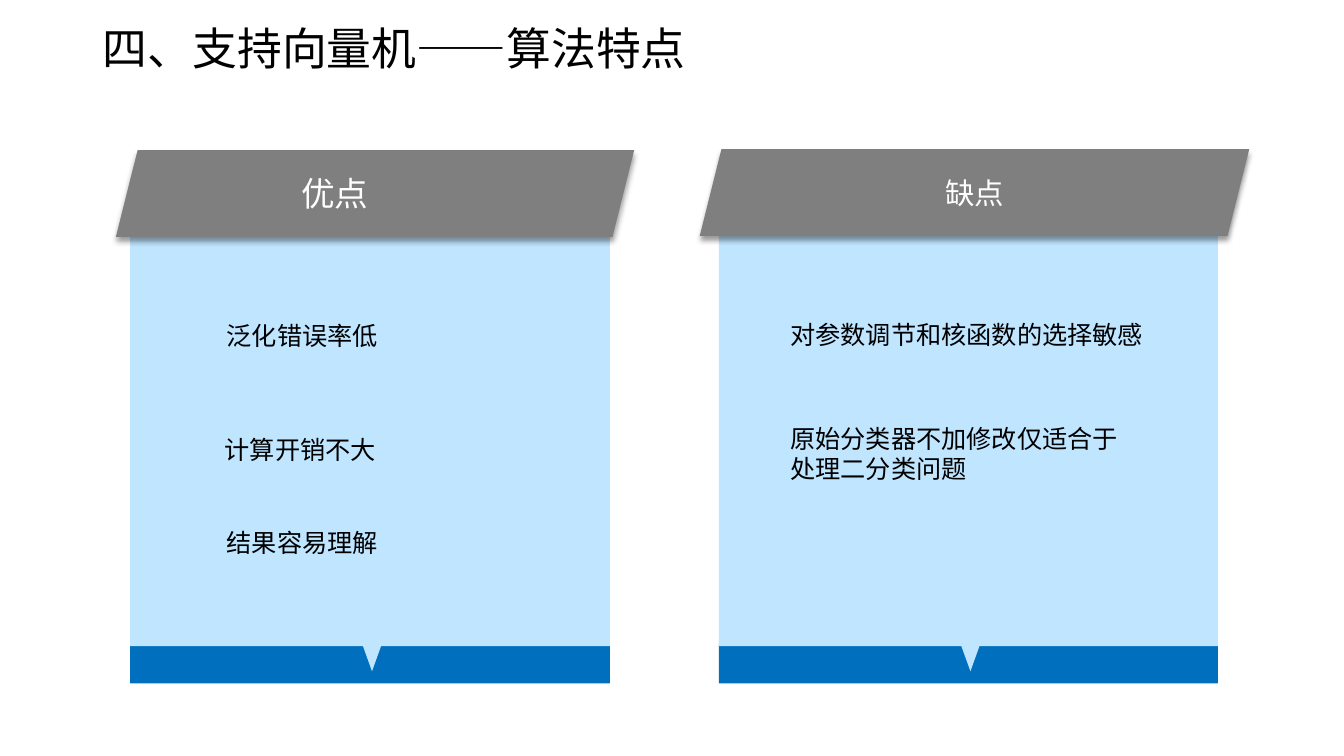
"""Build a slide comparing strengths and weaknesses of support vector machines."""
from dataclasses import dataclass

from lxml import etree
from pptx import Presentation
from pptx import util as u
from pptx.dml.color import RGBColor
from pptx.enum import shapes, text
from pptx.oxml import parse_xml
from pptx.oxml.ns import nsdecls, qn


@dataclass(frozen=True)
class Theme:
    title_font: str = "Noto Sans CJK SC"
    body_font: str = "Noto Sans CJK SC"
    header_font: str = "Arial"
    title_size: float = 32
    body_size: float = 18
    ink: str = "000000"
    header_ink: str = "FFFFFF"
    header_fill: str = "7F7F7F"
    panel_fill: str = "BFE5FF"
    footer_fill: str = "0070BE"


@dataclass(frozen=True)
class Box:
    left: float
    top: float
    width: float
    height: float

    def lengths(self) -> list:
        return [u.Inches(n) for n in (self.left, self.top, self.width, self.height)]


@dataclass(frozen=True)
class Point:
    wording: str
    box: Box


@dataclass(frozen=True)
class Panel:
    heading: str
    header: Box
    heading_font: str
    heading_size: float
    heading_indent: float
    heading_align: text.PP_ALIGN
    left: float
    width: float
    points: tuple[Point, ...]


THEME = Theme()
TITLE_BOX = Box(0.92, 0, 11.5, 1.02)
PANEL_TOP, PANEL_BOTTOM, NOTCH_BOTTOM = 1.9, 6.41, 6.66
NOTCH_HALF, NOTCH_SHIFT = 0.09, 0.02
FOOTER_TOP, FOOTER_HEIGHT = 6.39, 0.39
POINT_INDENT = 0.5

PANELS = (
    Panel("优点", Box(1.15, 1.49, 5.14, 0.86), THEME.header_font, 24, 1.22,
          text.PP_ALIGN.LEFT, 1.29, 4.76, (
              Point("泛化错误率低", Box(1.65, 2.66, 3.55, 1.34)),
              Point("计算开销不大", Box(1.63, 3.79, 3.55, 1.34)),
              Point("结果容易理解", Box(1.65, 4.71, 3.55, 1.34)))),
    Panel("缺点", Box(6.94, 1.48, 5.45, 0.86), THEME.title_font, 21, 0,
          text.PP_ALIGN.CENTER, 7.13, 4.95, (
              Point("对参数调节和核函数的选择敏感", Box(7.24, 2.77, 4.47, 1.1)),
              Point("原始分类器不加修改仅适合于处理二分类问题", Box(7.24, 3.83, 4.18, 1.34)))),
)


def write(shape, wording: str, font: str, size: float, color: str,
          align: text.PP_ALIGN = text.PP_ALIGN.LEFT, indent: float = 0):
    """Put one middle-anchored paragraph in a shape and return it."""
    frame = shape.text_frame
    frame.word_wrap = True
    frame.auto_size = text.MSO_AUTO_SIZE.NONE
    frame.vertical_anchor = text.MSO_ANCHOR.MIDDLE
    paragraph = frame.paragraphs[0]
    paragraph.alignment = align
    properties = paragraph._p.get_or_add_pPr()
    properties.set("marL", str(u.Inches(indent)))
    properties.set("indent", "0")
    run = paragraph.add_run()
    run.text = wording
    run.font.name = font
    run.font.size = u.Pt(size)
    run.font.color.rgb = RGBColor.from_string(color)
    east_asian = etree.SubElement(run._r.get_or_add_rPr(), qn("a:ea"))
    east_asian.set("typeface", THEME.body_font)
    return paragraph


def paint(shape, color: str) -> None:
    """Give a shape a plain fill without outline or shadow."""
    shape.shadow.inherit = False
    shape.fill.solid()
    shape.fill.fore_color.rgb = RGBColor.from_string(color)
    shape.line.fill.background()


def cast_shadow(shape) -> None:
    """Add a soft shadow just below a shape."""
    effects = shape._element.spPr.find(qn("a:effectLst"))
    effects.append(parse_xml(
        f'<a:outerShdw {nsdecls("a")} blurRad="{u.Pt(4)}" dist="{u.Pt(3)}" '
        'dir="5400000" algn="t" rotWithShape="0"><a:srgbClr val="000000">'
        '<a:alpha val="40000"/></a:srgbClr></a:outerShdw>'))


def draw_panel(slide, panel: Panel) -> None:
    """Draw the footer, notched body and slanted header of one panel."""
    group = slide.shapes.add_group_shape()
    footer = group.shapes.add_shape(
        shapes.MSO_SHAPE.RECTANGLE,
        *Box(panel.left, FOOTER_TOP, panel.width, FOOTER_HEIGHT).lengths())
    paint(footer, THEME.footer_fill)

    right = panel.left + panel.width
    notch = panel.left + panel.width / 2 + NOTCH_SHIFT
    outline = [(right, PANEL_TOP), (right, PANEL_BOTTOM),
               (notch + NOTCH_HALF, PANEL_BOTTOM), (notch, NOTCH_BOTTOM),
               (notch - NOTCH_HALF, PANEL_BOTTOM), (panel.left, PANEL_BOTTOM)]
    builder = group.shapes.build_freeform(u.Inches(panel.left), u.Inches(PANEL_TOP))
    builder.add_line_segments([(u.Inches(x), u.Inches(y)) for x, y in outline], close=True)
    paint(builder.convert_to_shape(), THEME.panel_fill)

    header = group.shapes.add_shape(shapes.MSO_SHAPE.PARALLELOGRAM, *panel.header.lengths())
    paint(header, THEME.header_fill)
    cast_shadow(header)
    write(header, panel.heading, panel.heading_font, panel.heading_size,
          THEME.header_ink, panel.heading_align, panel.heading_indent)


def draw_point(slide, point: Point) -> None:
    """Write one indented statement on a panel."""
    box = slide.shapes.add_textbox(*point.box.lengths())
    paragraph = write(box, point.wording, THEME.body_font, THEME.body_size,
                      THEME.ink, indent=POINT_INDENT)
    paragraph.level = 1


def main() -> None:
    """Assemble and save the presentation."""
    presentation = Presentation()
    presentation.slide_width = u.Inches(13.33)
    presentation.slide_height = u.Inches(7.5)
    slide = presentation.slides.add_slide(presentation.slide_layouts.get_by_name("Title Only"))
    title = slide.shapes.title
    title.left, title.top, title.width, title.height = TITLE_BOX.lengths()
    heading = write(title, "四、支持向量机——算法特点", THEME.title_font,
                    THEME.title_size, THEME.ink)
    heading.line_spacing = 0.9
    for panel in PANELS:
        draw_panel(slide, panel)
    for panel in PANELS:
        for point in panel.points:
            draw_point(slide, point)
    presentation.save("out.pptx")


if __name__ == "__main__":
    main()
